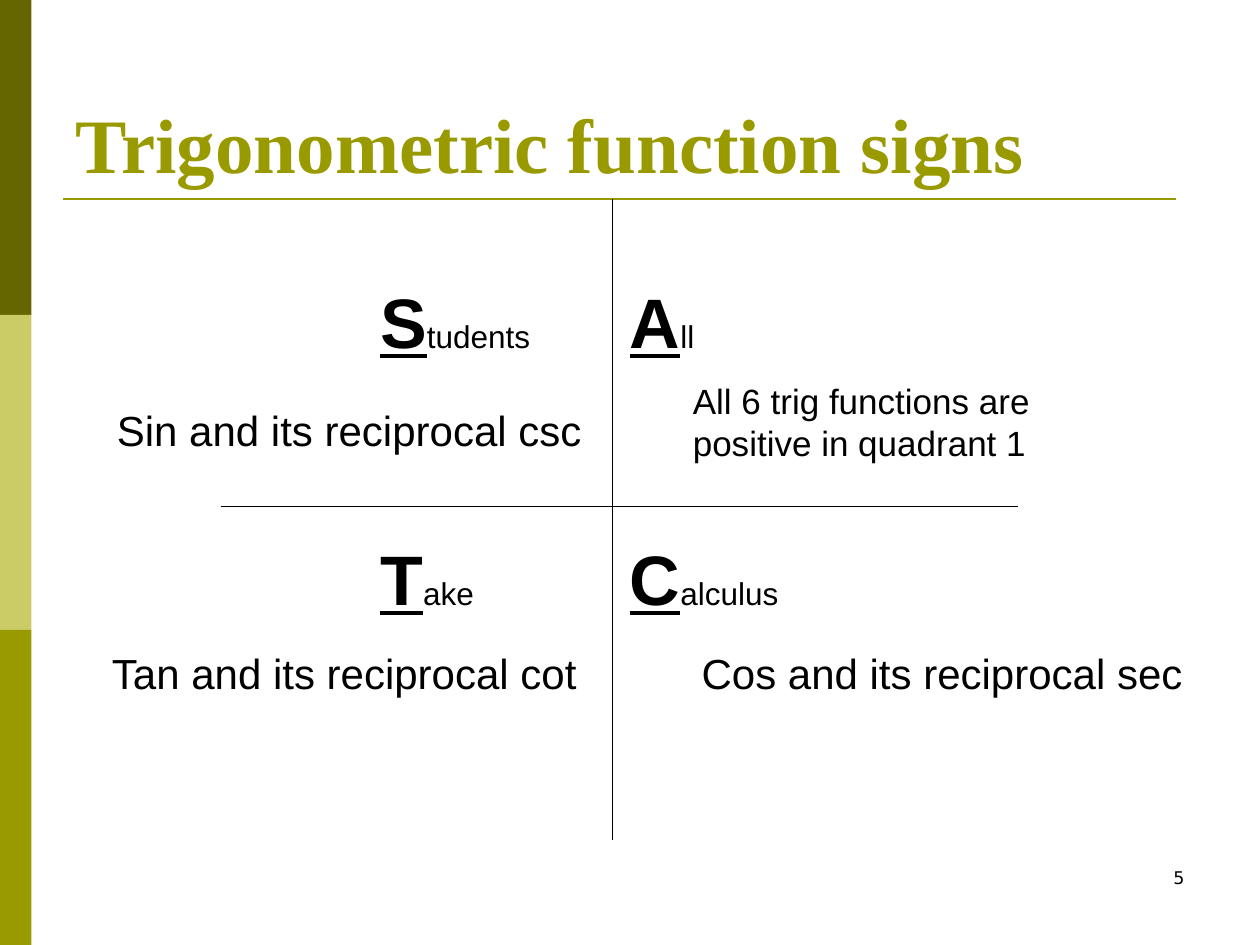
from dataclasses import dataclass

from lxml.etree import SubElement
from pptx import Presentation
from pptx.dml.color import RGBColor as RGB
from pptx.enum.shapes import MSO_CONNECTOR as Link, MSO_SHAPE as Shape
from pptx.enum.text import MSO_ANCHOR as Anchor, MSO_AUTO_SIZE as Fit, PP_ALIGN as Align
from pptx.oxml.ns import qn
from pptx.util import Inches, Pt


@dataclass(frozen=True)
class Theme:
    """Colours, fonts and type sizes of the slide."""
    ink: RGB = RGB(0, 0, 0)
    dark: RGB = RGB(0x66, 0x66, 0x00)
    pale: RGB = RGB(0xCC, 0xCC, 0x66)
    olive: RGB = RGB(0x99, 0x99, 0x00)
    head: str = "Times New Roman"
    body: str = "Arial"
    mono: str = "DejaVu Sans"
    title: int = 44
    letter: int = 40
    fact: int = 24
    note: int = 20
    word: int = 18
    page: int = 10


THEME = Theme()


def style(font, size, name=THEME.body, color=THEME.ink, bold=False):
    """Set the face, size, colour and weight of a font."""
    font.name, font.size, font.bold = name, Pt(size), bold
    font.color.rgb = color


def add_band(slide, row, color):
    """Add one block of the side bar."""
    band = slide.shapes.add_shape(
        Shape.RECTANGLE, 0, Inches(2.5 * row), Inches(0.25), Inches(2.5))
    band.shadow.inherit = False
    band.fill.solid()
    band.fill.fore_color.rgb = color
    band.line.fill.background()


def add_line(slide, x1, y1, x2, y2, color=THEME.ink, width=0.75):
    """Add a straight line without a shadow."""
    line = slide.shapes.add_connector(
        Link.STRAIGHT, Inches(x1), Inches(y1), Inches(x2), Inches(y2))
    line.line.color.rgb = color
    line.line.width = Pt(width)
    SubElement(line._element.spPr, qn("a:effectLst"))


def add_title(slide, text):
    """Place and fill the title."""
    title = slide.shapes.title
    title.left, title.top = Inches(0.5), Inches(0.3)
    title.width, title.height = Inches(9), Inches(1.25)
    frame = title.text_frame
    frame.text, frame.vertical_anchor = text, Anchor.BOTTOM
    frame.auto_size = Fit.NONE
    para = frame.paragraphs[0]
    para.alignment = Align.LEFT
    style(para.font, THEME.title, THEME.head, THEME.olive, True)


def add_box(slide, x, y, wide, high, wrap=False):
    """Add a text box and return its first paragraph."""
    box = slide.shapes.add_textbox(Inches(x), Inches(y), Inches(wide), Inches(high))
    box.text_frame.word_wrap = wrap
    return box.text_frame.paragraphs[0]


def add_text(slide, text, x, y, wide, high=0.5, size=THEME.fact,
             name=THEME.body, wrap=False, align=Align.LEFT):
    """Add a text box in a single style."""
    para = add_box(slide, x, y, wide, high, wrap)
    para.text, para.alignment = text, align
    style(para.font, size, name)


def add_word(slide, word, x, y, wide):
    """Add a word with a large underlined initial."""
    para = add_box(slide, x, y, wide, 0.77)
    style(para.font, THEME.word)
    first, rest = para.add_run(), para.add_run()
    first.text, rest.text = word[0], word[1:]
    style(first.font, THEME.letter, bold=True)
    first.font.underline = True
    style(rest.font, THEME.word)


def main():
    """Build the slide and save it."""
    deck = Presentation()
    deck.slide_width, deck.slide_height = Inches(10), Inches(7.5)
    slide = deck.slides.add_slide(deck.slide_layouts[5])

    for row, color in enumerate((THEME.dark, THEME.pale, THEME.olive)):
        add_band(slide, row, color)
    add_line(slide, 0.5, 1.58, 9.33, 1.58, THEME.olive, 1.5)
    add_text(slide, "5", 7.17, 6.83, 2.33, size=THEME.page,
             name=THEME.mono, wrap=True, align=Align.RIGHT)
    add_title(slide, "Trigonometric function signs")

    add_line(slide, 4.86, 1.58, 4.86, 6.67)
    add_line(slide, 1.75, 4.02, 8.08, 4.02)

    left, right, upper, lower = 2.92, 4.9, 2.16, 4.2
    add_word(slide, "All", right, upper, 0.71)
    add_word(slide, "Students", left, upper, 1.4)
    add_word(slide, "Take", left, lower, 0.95)
    add_word(slide, "Calculus", right, lower, 1.39)

    add_text(slide, "Sin and its reciprocal csc", 0.83, 3.16, 3.93)
    add_text(slide, "Tan and its reciprocal cot", 0.79, 5.09, 4.02)
    add_text(slide, "Cos and its reciprocal sec", 5.47, 5.09, 4.06)
    add_text(slide, "All 6 trig functions are positive in quadrant 1",
             5.4, 2.96, 3.68, 0.77, THEME.note, wrap=True)

    deck.save("out.pptx")


if __name__ == "__main__":
    main()
